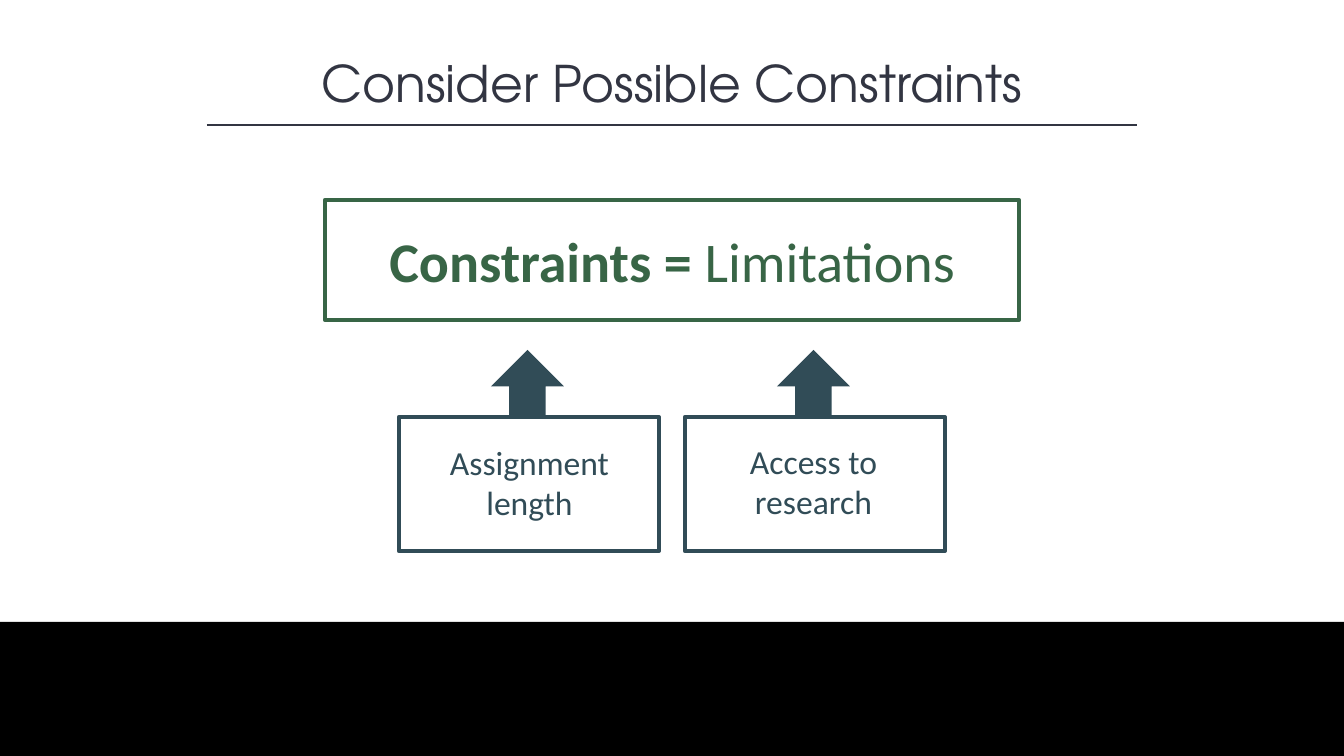
from dataclasses import dataclass

import pptx
import pptx.dml.color
import pptx.enum.shapes
import pptx.enum.text
import pptx.oxml.ns
import pptx.util
from lxml import etree
from pptx.shapes.autoshape import Shape
from pptx.slide import Slide
from pptx.text.text import TextFrame

EMU_PER_PX = 914400 / 100.8
PAGE_WIDTH, PAGE_HEIGHT = 1344, 756
INK, GREEN, SLATE = "323542", "386546", "314C57"
WHITE, BLACK = "FFFFFF", "000000"
TITLE_FONT, BODY_FONT = "TeX Gyre Adventor", "Calibri"
RECTANGLE = pptx.enum.shapes.MSO_SHAPE.RECTANGLE
UP_ARROW = pptx.enum.shapes.MSO_SHAPE.UP_ARROW


@dataclass(frozen=True)
class Area:
    left: int
    top: int
    width: int
    height: int


@dataclass(frozen=True)
class Span:
    text: str
    size: int
    color: str
    font: str = BODY_FONT
    bold: bool = False


@dataclass(frozen=True)
class Constraint:
    text: str
    card: Area
    label: Area


def px(length: int) -> pptx.util.Emu:
    return pptx.util.Emu(round(length * EMU_PER_PX))


def rgb(color: str) -> pptx.dml.color.RGBColor:
    return pptx.dml.color.RGBColor.from_string(color)


def edges(area: Area) -> list[pptx.util.Emu]:
    return [px(n) for n in (area.left, area.top, area.width, area.height)]


def write(frame: TextFrame, spans: list[Span], wrap: bool = True) -> None:
    frame.word_wrap = wrap
    para = frame.paragraphs[0]
    para.alignment = pptx.enum.text.PP_ALIGN.CENTER
    for span in spans:
        run = para.add_run()
        run.text = span.text
        run.font.name = span.font
        run.font.size = pptx.util.Pt(span.size)
        run.font.bold = span.bold
        run.font.color.rgb = rgb(span.color)


def add_text(page: Slide, area: Area, spans: list[Span], wrap: bool = True) -> None:
    write(page.shapes.add_textbox(*edges(area)).text_frame, spans, wrap)


def add_block(page: Slide, area: Area, fill: str | None = None,
              outline: str | None = None,
              kind: pptx.enum.shapes.MSO_SHAPE = RECTANGLE) -> Shape:
    block = page.shapes.add_shape(kind, *edges(area))
    block.shadow.inherit = False
    if fill:
        block.fill.solid()
        block.fill.fore_color.rgb = rgb(fill)
    else:
        block.fill.background()
    if outline:
        block.line.color.rgb = rgb(outline)
        block.line.width = pptx.util.Pt(3)
    else:
        block.line.fill.background()
    return block


def add_rule(page: Slide, left: int, right: int, top: int) -> None:
    rule = page.shapes.add_connector(
        pptx.enum.shapes.MSO_CONNECTOR.STRAIGHT, px(left), px(top), px(right), px(top))
    rule.line.color.rgb = rgb(INK)
    rule.line.width = pptx.util.Pt(1)
    properties = rule.element.find(pptx.oxml.ns.qn("p:spPr"))
    etree.SubElement(properties, pptx.oxml.ns.qn("a:effectLst"))


def add_constraint(page: Slide, constraint: Constraint) -> None:
    # The card covers the foot of its arrow
    card = constraint.card
    arrow = Area(card.left + 92, card.top - 67, 73, 82)
    add_block(page, arrow, fill=SLATE, kind=UP_ARROW)
    add_block(page, card, fill=WHITE, outline=SLATE)
    label = add_block(page, constraint.label, fill=WHITE)
    write(label.text_frame, [Span(constraint.text, 24, SLATE)])


def main() -> None:
    deck = pptx.Presentation()
    deck.slide_width, deck.slide_height = px(PAGE_WIDTH), px(PAGE_HEIGHT)
    page = deck.slides.add_slide(deck.slide_layouts[6])

    # Title with rule
    add_rule(page, 207, 1137, 125)
    add_text(page, Area(262, 47, 820, 72),
             [Span("Consider Possible Constraints", 36, INK, TITLE_FONT)])

    # Definition
    add_block(page, Area(325, 200, 694, 120), outline=GREEN)
    add_text(page, Area(372, 222, 600, 78),
             [Span("Constraints = ", 40, GREEN, bold=True),
              Span("Limitations", 40, GREEN)], wrap=False)

    # Constraints pointing up at the definition
    for constraint in (
        Constraint("Access to research", Area(685, 417, 260, 134), Area(707, 435, 213, 92)),
        Constraint("Assignment length", Area(399, 417, 260, 134), Area(408, 436, 243, 92)),
    ):
        add_constraint(page, constraint)

    # Bottom band
    add_block(page, Area(0, 622, PAGE_WIDTH, PAGE_HEIGHT - 622), fill=BLACK)

    deck.save("out.pptx")


if __name__ == "__main__":
    main()
